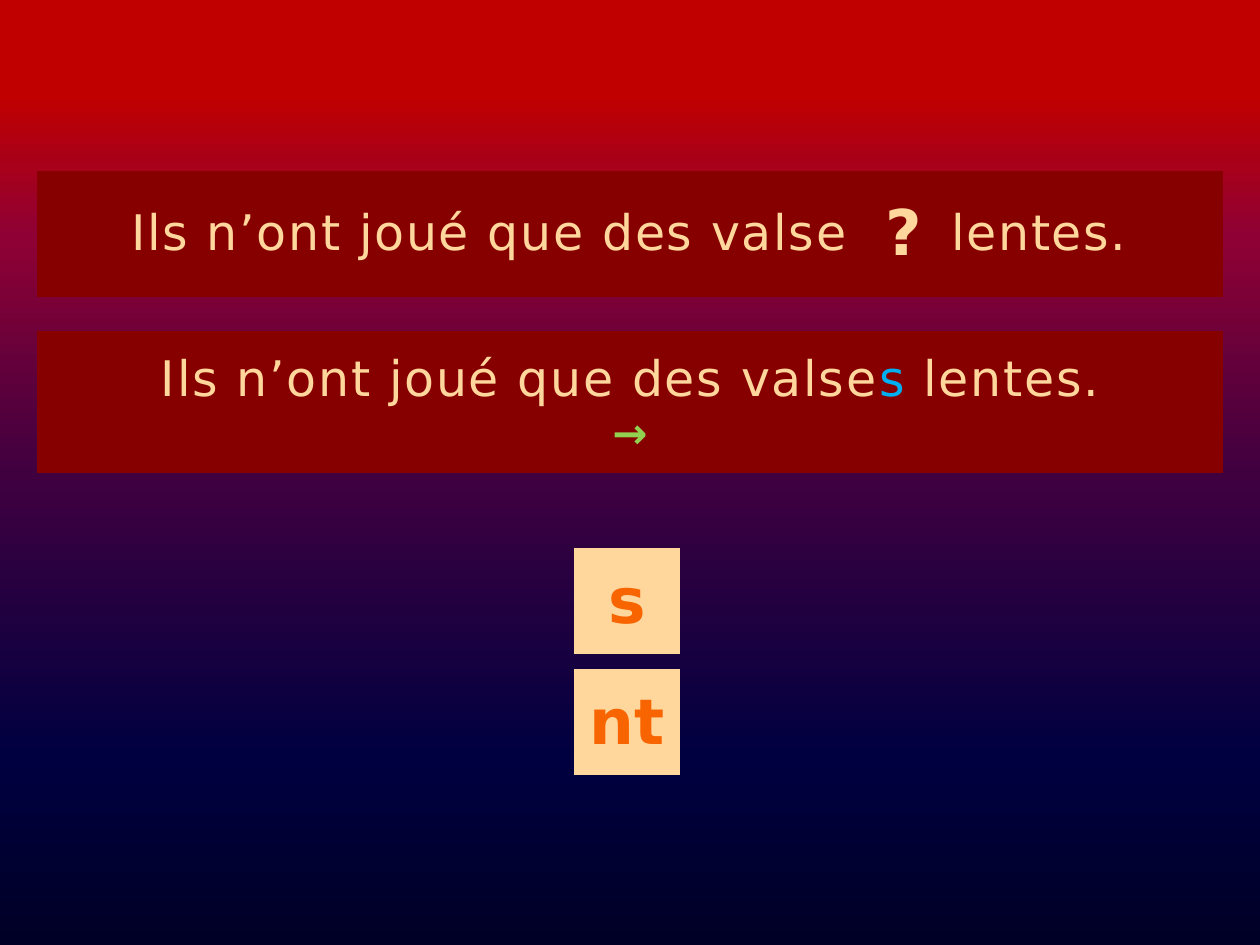
from dataclasses import dataclass

from lxml import etree
from pptx import Presentation
from pptx.dml.color import RGBColor
from pptx.enum.shapes import MSO_SHAPE
from pptx.enum.text import MSO_ANCHOR, PP_ALIGN
from pptx.oxml.ns import qn
from pptx.util import Inches, Pt

BUTTON = MSO_SHAPE.ACTION_BUTTON_CUSTOM
MIDDLE = MSO_ANCHOR.MIDDLE
CENTER, LEFT = PP_ALIGN.CENTER, PP_ALIGN.LEFT
BLANK_LAYOUT = 6


@dataclass(frozen=True)
class Theme:
    font: str = "DejaVu Sans"
    panel: str = "860000"
    cream: str = "FFD79D"
    orange: str = "F86400"
    blue: str = "00B0F0"
    green: str = "92D050"
    sentence: int = 28
    letter: int = 36
    arrow: int = 24
    night: tuple = ((0, "000026"), (20, "000040"), (50, "400040"),
                    (75, "8F0134"), (90, "C00000"))


THEME = Theme()


def add_button(page, left, top, width, height, color=None):
    box = page.shapes.add_shape(BUTTON, Inches(left), Inches(top),
                                Inches(width), Inches(height))
    box.shadow.inherit = False
    box.line.fill.background()
    if color:
        box.fill.solid()
        box.fill.fore_color.rgb = RGBColor.from_string(color)
    return box


def add_backdrop(page, width, height):
    """Cover the page with a gradient that rises from bottom to top."""
    box = add_button(page, 0, 0, width, height)
    box.fill.gradient()
    box.fill.gradient_angle = 90
    stops = box.fill._fill._gradFill.find(qn("a:gsLst"))
    for stop in list(stops):
        stops.remove(stop)
    for percent, color in THEME.night:
        stop = etree.SubElement(stops, qn("a:gs"), pos=str(percent * 1000))
        etree.SubElement(stop, qn("a:srgbClr"), val=color)


def set_frame(box, left=0.1, top=0.04, bottom=0.08, wrap=False):
    frame = box.text_frame
    frame.word_wrap = wrap
    frame.vertical_anchor = MIDDLE
    frame.margin_left, frame.margin_right = Inches(left), Inches(0.1)
    frame.margin_top, frame.margin_bottom = Inches(top), Inches(bottom)
    return frame


def add_text(para, text, size=THEME.sentence, color=THEME.cream,
             bold=False, spacing=0, align=CENTER):
    """Append a span; spacing is the letter spacing in points."""
    para.alignment = align
    span = para.add_run()
    span.text = text
    span.font.name = THEME.font
    span.font.size = Pt(size)
    span.font.bold = bold
    span.font.color.rgb = RGBColor.from_string(color)
    if spacing:
        span.font._element.set("spc", str(spacing * 100))


def add_tab_stop(para, position):
    tabs = etree.SubElement(para._p.get_or_add_pPr(), qn("a:tabLst"))
    etree.SubElement(tabs, qn("a:tab"), pos=str(Inches(position)), algn="l")


def add_letter_tile(page, text, left, top, fill, color, width=0.84):
    box = add_button(page, left, top, width, 0.84, fill)
    para = set_frame(box).paragraphs[0]
    add_text(para, text, size=THEME.letter, color=color, bold=True)


def add_question(page):
    """Show the sentence with a tabbed gap that the question mark fills."""
    box = add_button(page, 0.29, 1.36, 9.42, 1, THEME.panel)
    para = set_frame(box, left=0.75, top=0.02, wrap=True).paragraphs[0]
    add_tab_stop(para, 6.51)
    add_text(para, "Ils n’ont joué que des valse\tlentes.",
             spacing=1, align=LEFT)
    add_letter_tile(page, "?", 6.8, 1.43, THEME.panel, THEME.cream,
                    width=0.74)


def add_answer(page):
    box = add_button(page, 0.29, 2.63, 9.42, 1.12, THEME.panel)
    frame = set_frame(box, bottom=0.04)
    sentence = frame.paragraphs[0]
    for text, color in (("Ils n’ont joué que des valse", THEME.cream),
                        ("s ", THEME.blue), ("lentes.", THEME.cream)):
        add_text(sentence, text, color=color, spacing=1)
    arrow = frame.add_paragraph()
    arrow.space_after = Pt(6)
    add_text(arrow, "→", size=THEME.arrow, color=THEME.green,
             bold=True, spacing=1)


def main():
    deck = Presentation()
    deck.slide_width, deck.slide_height = Inches(10), Inches(7.5)
    page = deck.slides.add_slide(deck.slide_layouts[BLANK_LAYOUT])
    add_backdrop(page, 10, 7.5)
    add_question(page)
    for row, ending in enumerate(("s", "nt")):
        add_letter_tile(page, ending, 4.56, 4.35 + row * 0.96,
                        THEME.cream, THEME.orange)
    add_answer(page)
    deck.save("out.pptx")


if __name__ == "__main__":
    main()
